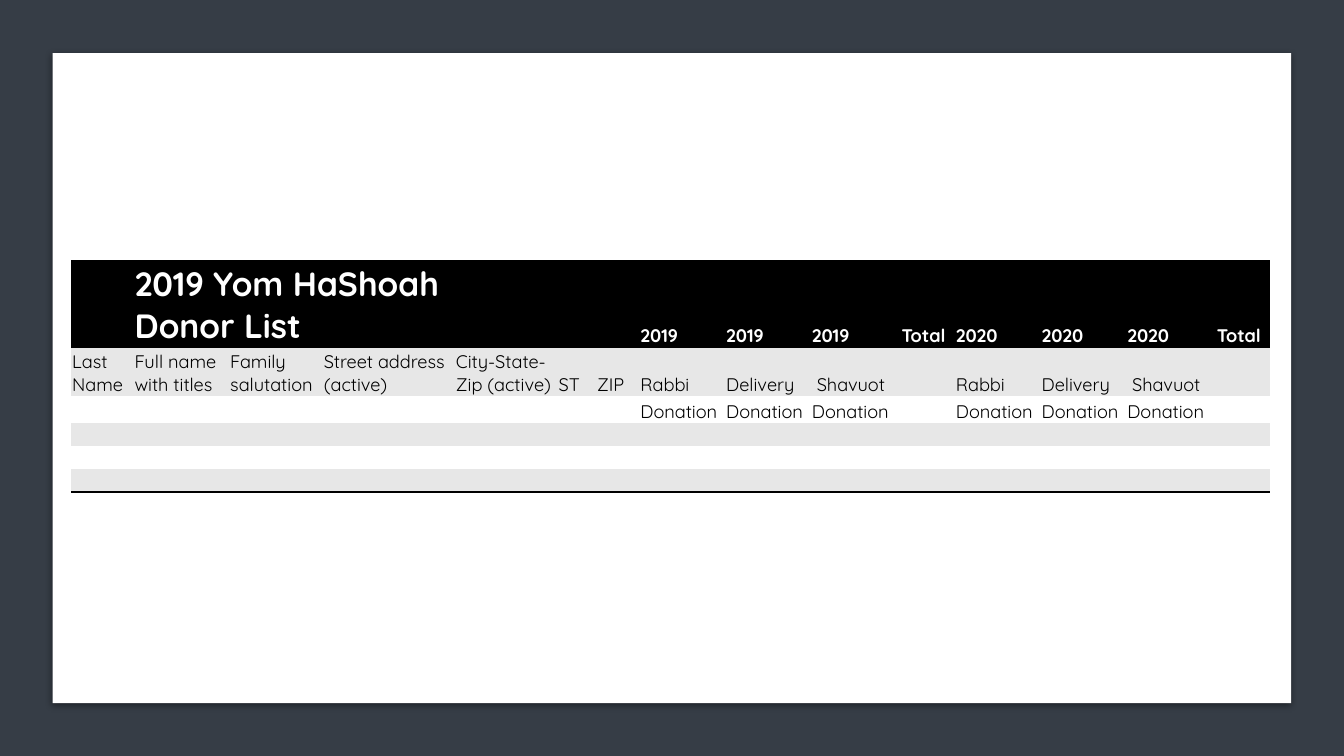
from lxml.etree import SubElement
from pptx import Presentation
from pptx.dml.color import RGBColor
from pptx.enum.shapes import MSO_SHAPE as Shape
from pptx.enum.text import MSO_ANCHOR as Anchor
from pptx.oxml import parse_xml
from pptx.oxml.ns import qn
from pptx.util import Cm, Pt

BLACK, WHITE, GREY, SLATE = "000000", "FFFFFF", "E7E7E7", "363D46"
DRAWING = 'xmlns:a="http://schemas.openxmlformats.org/drawingml/2006/main"'


def paint(fill, color):
    fill.solid()
    fill.fore_color.rgb = RGBColor.from_string(color)


def add_border(cell, side):
    cell._tc.get_or_add_tcPr().append(parse_xml(
        f'<a:{side} {DRAWING} w="25400"><a:solidFill><a:srgbClr val="{BLACK}"/>'
        f'</a:solidFill></a:{side}>'))


deck = Presentation()
deck.slide_width, deck.slide_height = Cm(33.87), Cm(19.05)
page = deck.slides.add_slide(deck.slide_layouts[6])
paint(page.background.fill, SLATE)

card = page.shapes.add_shape(Shape.RECTANGLE, Cm(1.33), Cm(1.34), Cm(31.21), Cm(16.38))
paint(card.fill, WHITE)
card.line.fill.background()
card.shadow.inherit = False
effects = card._element.spPr.find(qn("a:effectLst"))
effects.append(parse_xml(
    f'<a:outerShdw {DRAWING} blurRad="63500" dist="17780" dir="5400000">'
    f'<a:srgbClr val="{BLACK}"><a:alpha val="43000"/></a:srgbClr></a:outerShdw>'))

year_widths = [2.16, 2.16, 2.26, 1.37]
widths = [1.57, 2.41, 2.36, 3.33, 2.59, 0.97, 1.09] + year_widths * 2
heights = [2.16, 1.22, 0.69, 0.58, 0.58, 0.58]
fills = [BLACK, GREY, WHITE, GREY, WHITE, GREY]
blank = [""] * 15
rows = [
    ["", "2019 Yom HaShoah Donor List"] + [""] * 5
    + ["2019"] * 3 + ["Total"] + ["2020"] * 3 + ["Total"],
    ["Last Name", "Full name with titles", "Family salutation",
     "Street address (active)", "City-State-Zip (active)", "ST", "ZIP"]
    + ["Rabbi", "Delivery", " Shavuot", ""] * 2,
    [""] * 7 + (["Donation"] * 3 + [""]) * 2,
    blank, blank, blank,
]

frame = page.shapes.add_table(len(rows), len(widths), Cm(1.79), Cm(6.59),
                              Cm(sum(widths)), Cm(sum(heights)))
donors = frame.table
donors._tbl.tblPr.find(qn("a:tableStyleId")).text = "{2D5ABB26-0587-4C30-8999-92F81FD0307C}"
donors.horz_banding = False
for column, width in zip(donors.columns, widths):
    column.width = Cm(width)
for row, height in zip(donors.rows, heights):
    row.height = Cm(height)
donors.cell(0, 1).merge(donors.cell(0, 3))
donors.cell(2, 9).merge(donors.cell(2, 10))

for r, texts in enumerate(rows):
    for c, text in enumerate(texts):
        cell = donors.cell(r, c)
        cell.margin_left = cell.margin_right = cell.margin_top = Cm(0.03)
        cell.margin_bottom = 0
        cell.vertical_anchor = Anchor.BOTTOM
        if r == 0:
            add_border(cell, "lnT")
        if r in (0, len(rows) - 1):
            add_border(cell, "lnB")
        paint(cell.fill, fills[r])
        para = cell.text_frame.paragraphs[0]
        if not text:
            SubElement(para._p, qn("a:endParaRPr"), sz="1000")
            continue
        span = para.add_run()
        span.text = text
        span.font.name = "Quicksand"
        span.font.size = Pt(24 if (r, c) == (0, 1) else 13)
        span.font.bold = r == 0
        paint(span.font.fill, WHITE if r == 0 else BLACK)

deck.save("out.pptx")
